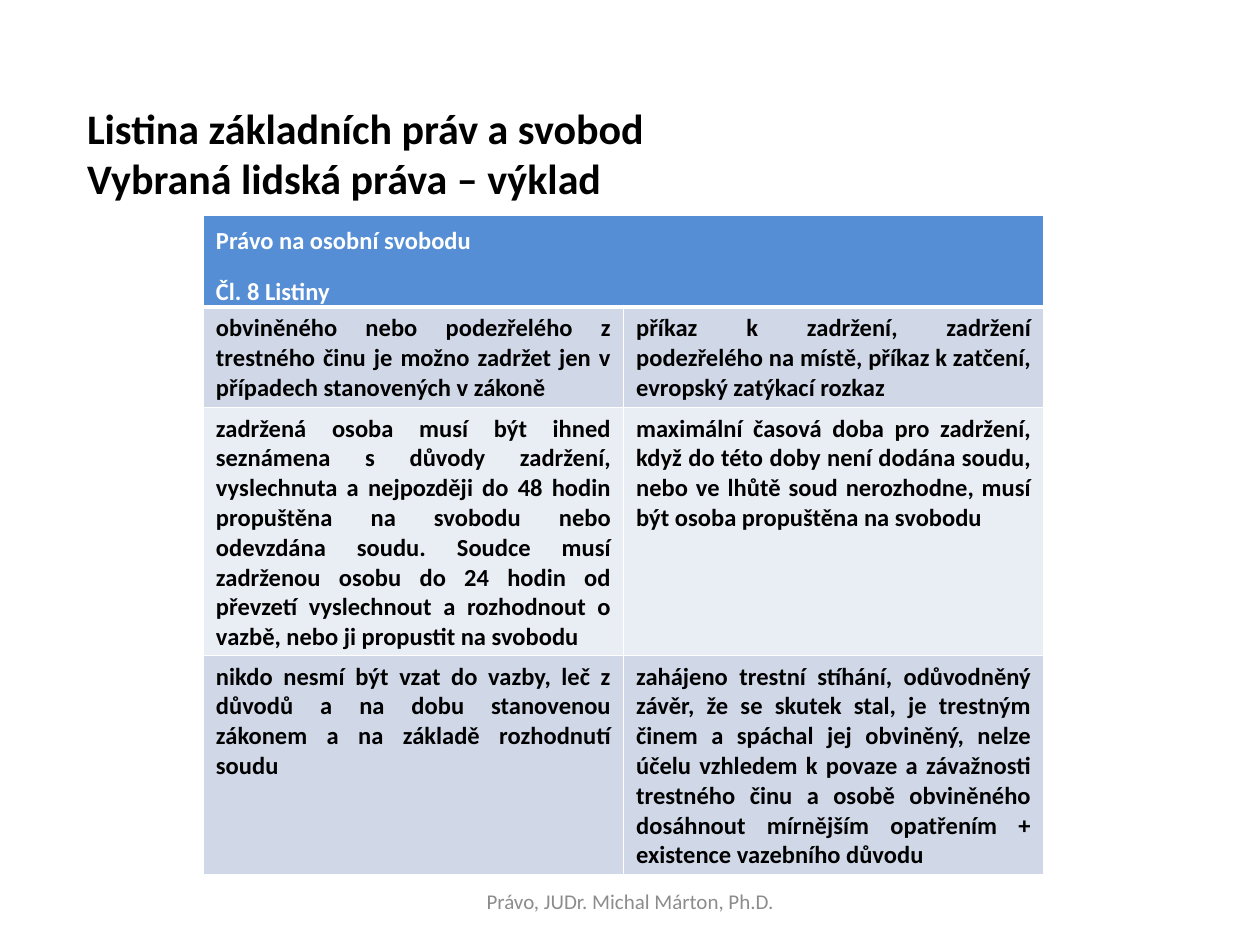
from lxml import etree
from pptx import Presentation
from pptx.dml.color import RGBColor
from pptx.enum.text import MSO_ANCHOR, MSO_AUTO_SIZE, PP_ALIGN
from pptx.oxml.ns import qn
from pptx.util import Cm, Pt

LEFT, CENTER, JUSTIFY = PP_ALIGN.LEFT, PP_ALIGN.CENTER, PP_ALIGN.JUSTIFY
TOP, MIDDLE = MSO_ANCHOR.TOP, MSO_ANCHOR.MIDDLE
NO_AUTOFIT = MSO_AUTO_SIZE.NONE
TITLE_ONLY = 5
FONT = "Calibri"

COLORS = {
    "text": "000000",
    "footer": "8C8C8C",
    "header": "558ED5",
    "white": "FFFFFF",
    "band_dark": "D0D8E8",
    "band_light": "E9EDF4",
}

TITLE = ["Listina základních práv a svobod", "Vybraná lidská práva – výklad"]
FOOTER = "Právo, JUDr. Michal Márton, Ph.D."
TABLE_HEADER = ["Právo na osobní svobodu", "Čl. 8 Listiny"]
TABLE_ROWS = [
    (
        "obviněného nebo podezřelého z trestného činu je možno zadržet jen "
        "v případech stanovených v zákoně",
        "příkaz k zadržení, zadržení podezřelého na místě, příkaz k zatčení, "
        "evropský zatýkací rozkaz",
    ),
    (
        "zadržená osoba musí být ihned seznámena s důvody zadržení, "
        "vyslechnuta a nejpozději do 48 hodin propuštěna na svobodu nebo "
        "odevzdána soudu. Soudce musí zadrženou osobu do 24 hodin od převzetí "
        "vyslechnout a rozhodnout o vazbě, nebo ji propustit na svobodu",
        "maximální časová doba pro zadržení, když do této doby není dodána "
        "soudu, nebo ve lhůtě soud nerozhodne, musí být osoba propuštěna "
        "na svobodu",
    ),
    (
        "nikdo nesmí být vzat do vazby, leč z důvodů a na dobu stanovenou "
        "zákonem a na základě rozhodnutí soudu",
        "zahájeno trestní stíhání, odůvodněný závěr, že se skutek stal, je "
        "trestným činem a spáchal jej obviněný, nelze účelu vzhledem k povaze "
        "a závažnosti trestného činu a osobě obviněného dosáhnout mírnějším "
        "opatřením + existence vazebního důvodu",
    ),
]
ROW_HEIGHTS = [1.86, 2.02, 5, 4.42]
COLUMN_WIDTH = 8.47


def rgb(name):
    return RGBColor.from_string(COLORS[name])


def write_text(text_frame, lines, size, color="text", bold=False, align=LEFT,
               line_spacing=None, space_after=None):
    for index, line in enumerate(lines):
        paragraph = text_frame.paragraphs[0] if index == 0 else text_frame.add_paragraph()
        paragraph.alignment = align
        if line_spacing is not None:
            paragraph.line_spacing = line_spacing
        if space_after is not None:
            paragraph.space_after = Pt(space_after)
        run = paragraph.add_run()
        run.text = line
        run.font.name = FONT
        run.font.size = Pt(size)
        run.font.bold = bold
        run.font.color.rgb = rgb(color)


def add_title(slide):
    title = slide.shapes.title
    title.left, title.top, title.width, title.height = Cm(1.5), Cm(1.93), Cm(22.6), Cm(9.07)
    text_frame = title.text_frame
    text_frame.word_wrap = True
    text_frame.auto_size = NO_AUTOFIT
    text_frame.vertical_anchor = TOP
    write_text(text_frame, TITLE, size=24, bold=True)


def add_footer(slide):
    footer = slide.shapes.add_textbox(Cm(8.68), Cm(17.65), Cm(8.05), Cm(1.02))
    text_frame = footer.text_frame
    text_frame.word_wrap = True
    text_frame.vertical_anchor = MIDDLE
    write_text(text_frame, [FOOTER], size=12, color="footer", align=CENTER)


def set_borders(cell, top=1, bottom=1):
    properties = cell._tc.get_or_add_tcPr()
    widths = {"a:lnL": 1, "a:lnR": 1, "a:lnT": top, "a:lnB": bottom}
    for position, (tag, width) in enumerate(widths.items()):
        line = etree.Element(qn(tag), w=str(Pt(width)))
        fill = etree.SubElement(line, qn("a:solidFill"))
        etree.SubElement(fill, qn("a:srgbClr"), val=COLORS["white"])
        properties.insert(position, line)


def format_cell(cell, fill, **borders):
    cell.fill.solid()
    cell.fill.fore_color.rgb = rgb(fill)
    cell.margin_top = Cm(0.13)
    cell.margin_bottom = Cm(0)
    set_borders(cell, **borders)


def add_rights_table(slide):
    frame = slide.shapes.add_table(
        len(ROW_HEIGHTS), 2, Cm(4.1), Cm(4.33),
        Cm(2 * COLUMN_WIDTH), Cm(sum(ROW_HEIGHTS)))
    table = frame.table
    for column in table.columns:
        column.width = Cm(COLUMN_WIDTH)
    for row, height in zip(table.rows, ROW_HEIGHTS):
        row.height = Cm(height)

    header = table.cell(0, 0)
    header.merge(table.cell(0, 1))
    for column_index in range(2):
        format_cell(table.cell(0, column_index), "header", bottom=3)
    write_text(header.text_frame, TABLE_HEADER, size=14, color="white", bold=True,
               align=JUSTIFY, line_spacing=1.15, space_after=10)

    for row_index, texts in enumerate(TABLE_ROWS, start=1):
        fill = "band_dark" if row_index % 2 else "band_light"
        for column_index, text in enumerate(texts):
            cell = table.cell(row_index, column_index)
            format_cell(cell, fill, top=3 if row_index == 1 else 1)
            write_text(cell.text_frame, [text], size=14, bold=True, align=JUSTIFY)


def main():
    presentation = Presentation()
    presentation.slide_width = Cm(25.4)
    presentation.slide_height = Cm(19.05)
    slide = presentation.slides.add_slide(presentation.slide_layouts[TITLE_ONLY])
    add_footer(slide)
    add_title(slide)
    add_rights_table(slide)
    presentation.save("out.pptx")


if __name__ == "__main__":
    main()
